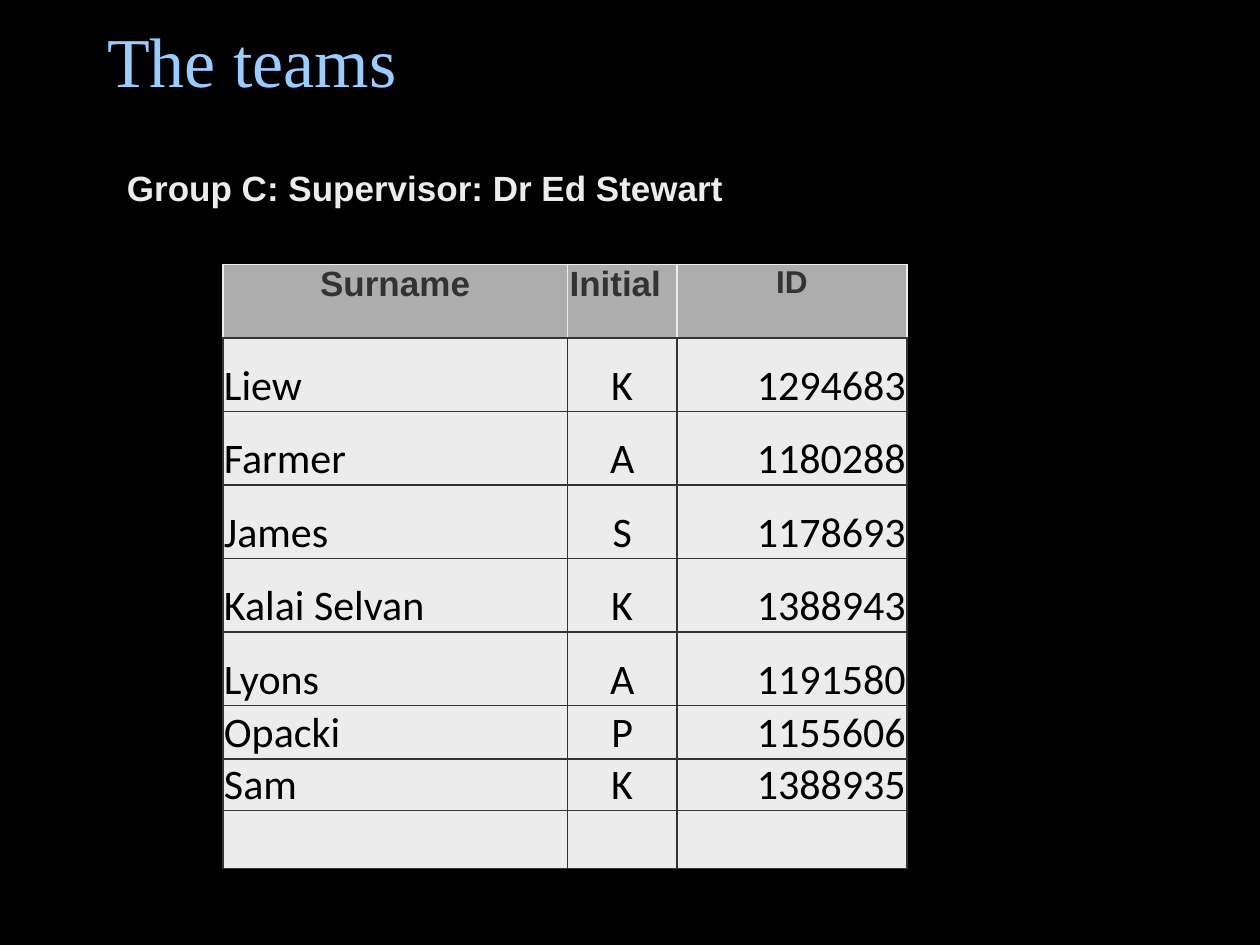
"""Build the slide that lists the members of supervision group C."""
from lxml import etree
from pptx import Presentation
from pptx.dml.color import RGBColor
from pptx.enum.text import MSO_ANCHOR, MSO_AUTO_SIZE, PP_ALIGN
from pptx.oxml.ns import qn
from pptx.util import Pt

LEFT, CENTER, RIGHT = PP_ALIGN.LEFT, PP_ALIGN.CENTER, PP_ALIGN.RIGHT
TOP, BOTTOM = MSO_ANCHOR.TOP, MSO_ANCHOR.BOTTOM
NO_FIT = MSO_AUTO_SIZE.NONE

BLACK = RGBColor(0x00, 0x00, 0x00)
SKY = RGBColor(0x99, 0xCC, 0xFF)
PALE = RGBColor(0xEC, 0xEC, 0xEC)
GRAY = RGBColor(0xAD, 0xAD, 0xAD)
DARK = RGBColor(0x33, 0x33, 0x33)

TITLE = "The teams"
GROUP = "Group C: Supervisor: Dr Ed Stewart"
HEADER = ("Surname", "Initial", "ID")
MEMBERS = [
    ("Liew", "K", "1294683"),
    ("Farmer", "A", "1180288"),
    ("James", "S", "1178693"),
    ("Kalai Selvan", "K", "1388943"),
    ("Lyons", "A", "1191580"),
    ("Opacki", "P", "1155606"),
    ("Sam", "K", "1388935"),
    ("", "", ""),
]

TITLE_FONT = {"name": "Times New Roman", "size": Pt(40), "bold": False}
GROUP_FONT = {"name": "Arial", "size": Pt(20), "bold": True}
SMALL_HEADER_FONT = {**GROUP_FONT, "size": Pt(18)}
MEMBER_FONT = {"name": "Calibri", "size": Pt(24), "bold": False}
HEADER_FONTS = (GROUP_FONT, GROUP_FONT, SMALL_HEADER_FONT)
HEADER_ALIGNMENTS = (CENTER, LEFT, CENTER)
MEMBER_ALIGNMENTS = (LEFT, CENTER, RIGHT)

TABLE_LEFT, TABLE_TOP = 127.3, 151.2
COLUMN_WIDTHS = (197, 62.5, 131.5)
ROW_HEIGHTS = (42,) * 6 + (30.6, 28.2, 33)
HEADER_MARGINS = (1.2, 0, 1.2, 0)
MEMBER_MARGINS = (0.7, 0.7, 0.7, 0)


def write(text_frame, text, font, color, alignment=LEFT):
    paragraph = text_frame.paragraphs[0]
    paragraph.text = text
    paragraph.alignment = alignment
    paragraph.space_before = Pt(0)
    for name, value in font.items():
        setattr(paragraph.font, name, value)
    paragraph.font.color.rgb = color


def set_margins(target, margins):
    for side, margin in zip(("left", "top", "right", "bottom"), margins):
        setattr(target, f"margin_{side}", Pt(margin))


def set_borders(cell, colors):
    properties = cell._tc.get_or_add_tcPr()
    for index, (side, color) in enumerate(colors.items()):
        line = etree.Element(qn(f"a:ln{side}"), w=str(Pt(1)))
        fill = etree.SubElement(line, qn("a:solidFill"))
        etree.SubElement(fill, qn("a:srgbClr"), val=str(color))
        properties.insert(index, line)


def add_title(slide):
    title = slide.shapes.title
    title.left, title.top, title.width, title.height = Pt(54), Pt(1.5), Pt(612), Pt(90)
    frame = title.text_frame
    frame.auto_size, frame.vertical_anchor = NO_FIT, TOP
    set_margins(frame, (7.2, 8.5, 7.2, 3.6))
    write(frame, TITLE, TITLE_FONT, SKY)


def add_group(slide):
    box = slide.shapes.add_textbox(Pt(65.5), Pt(91.5), Pt(459.5), Pt(31.5))
    box.text_frame.word_wrap = True
    write(box.text_frame, GROUP, GROUP_FONT, PALE)


def add_members(slide):
    table = slide.shapes.add_table(
        len(ROW_HEIGHTS), len(COLUMN_WIDTHS), Pt(TABLE_LEFT), Pt(TABLE_TOP),
        Pt(sum(COLUMN_WIDTHS)), Pt(sum(ROW_HEIGHTS))).table
    for column, width in zip(table.columns, COLUMN_WIDTHS):
        column.width = Pt(width)
    for row, height in zip(table.rows, ROW_HEIGHTS):
        row.height = Pt(height)
    for row_index, texts in enumerate([HEADER, *MEMBERS]):
        is_header = row_index == 0
        edge = PALE if is_header else DARK
        for column_index, text in enumerate(texts):
            cell = table.cell(row_index, column_index)
            cell.fill.solid()
            cell.fill.fore_color.rgb = GRAY if is_header else PALE
            cell.vertical_anchor = TOP if is_header else BOTTOM
            set_margins(cell, HEADER_MARGINS if is_header else MEMBER_MARGINS)
            set_borders(cell, {"L": edge, "R": edge, "T": edge, "B": DARK})
            if is_header:
                write(cell.text_frame, text, HEADER_FONTS[column_index], DARK,
                      HEADER_ALIGNMENTS[column_index])
            else:
                write(cell.text_frame, text, MEMBER_FONT, BLACK,
                      MEMBER_ALIGNMENTS[column_index])


def main():
    presentation = Presentation()
    presentation.slide_width, presentation.slide_height = Pt(720), Pt(540)
    slide = presentation.slides.add_slide(presentation.slide_layouts[5])
    slide.background.fill.solid()
    slide.background.fill.fore_color.rgb = BLACK
    add_title(slide)
    add_group(slide)
    add_members(slide)
    presentation.save("out.pptx")


if __name__ == "__main__":
    main()
